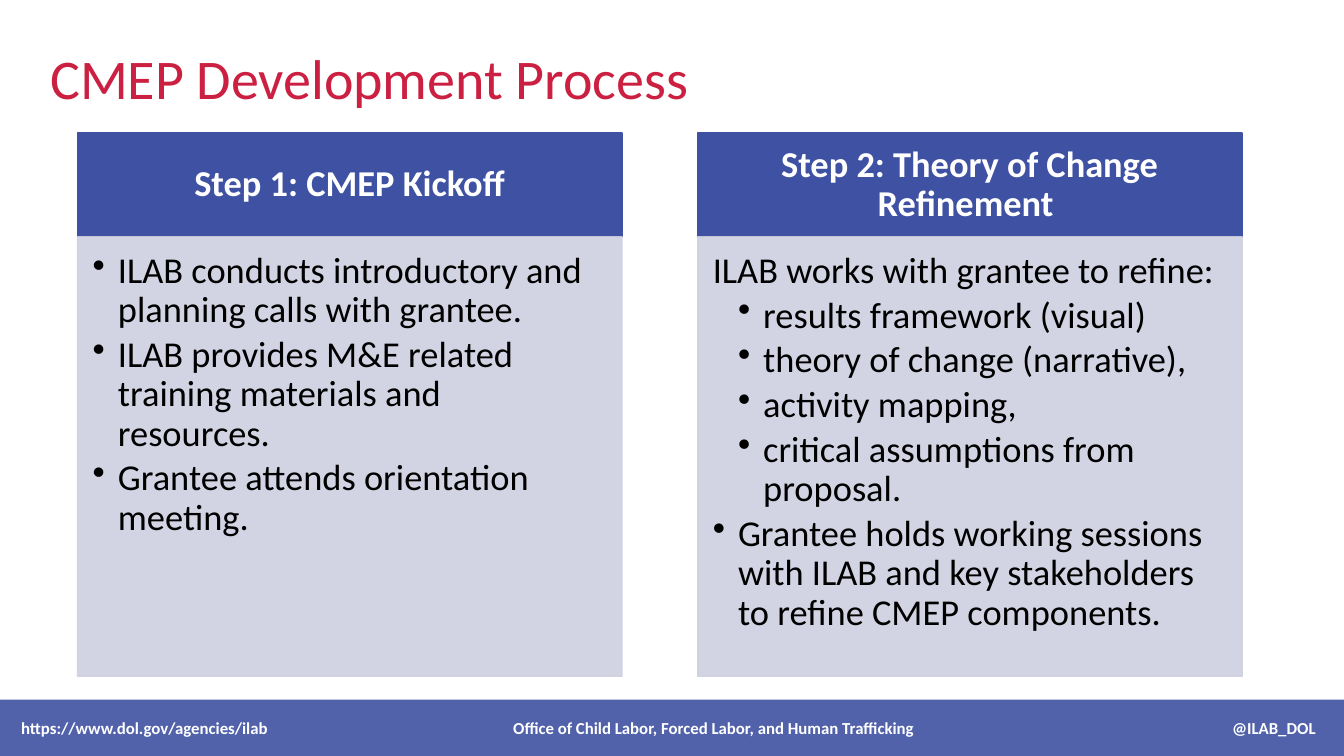
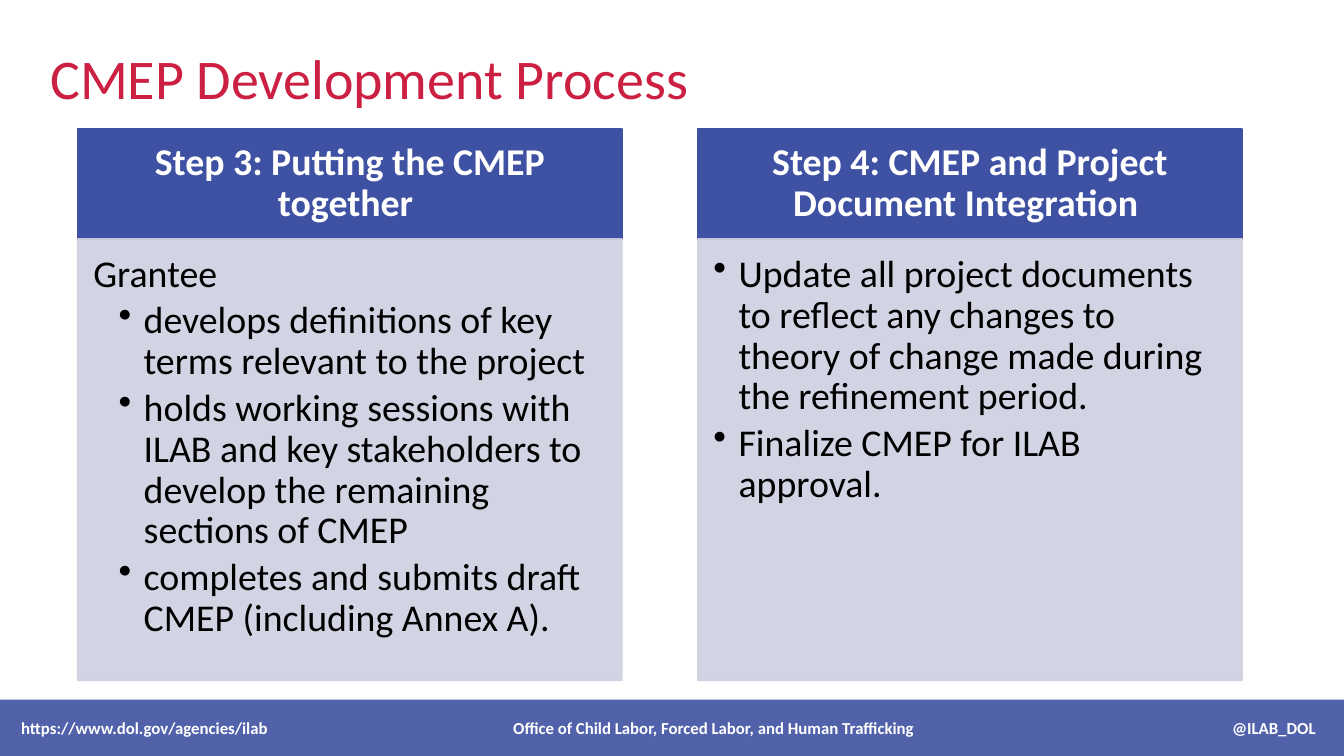
"""Build the two CMEP development process slides."""

from dataclasses import dataclass, field
from typing import Any, NamedTuple

from lxml.etree import SubElement
from pptx import Presentation
from pptx.dml.color import RGBColor as Rgb
from pptx.enum.shapes import MSO_AUTO_SHAPE_TYPE as ShapeKind
from pptx.enum.text import MSO_VERTICAL_ANCHOR as Anchor
from pptx.enum.text import PP_PARAGRAPH_ALIGNMENT as Align
from pptx.oxml.ns import qn
from pptx.util import Inches, Pt


@dataclass(frozen=True)
class Theme:
    font: str = "Calibri"
    title: Rgb = field(default_factory=lambda: Rgb.from_string("CB2042"))
    band: Rgb = field(default_factory=lambda: Rgb.from_string("3F51A2"))
    panel: Rgb = field(default_factory=lambda: Rgb.from_string("CFD0E0"))
    light: Rgb = field(default_factory=lambda: Rgb.from_string("FFFFFF"))
    dark: Rgb = field(default_factory=lambda: Rgb.from_string("000000"))
    title_size: int = 40
    footer_size: int = 12
    line_spacing: float = 0.9
    opacity: int = 90


class Area(NamedTuple):
    left: float
    top: float
    width: float
    height: float


class Insets(NamedTuple):
    left: float = 0.1
    top: float = 0.05
    right: float = 0.1
    bottom: float = 0.05

    def scaled(self, factor: float) -> "Insets":
        return Insets(*(value * factor for value in self))


class Item(NamedTuple):
    text: str
    level: int = 1
    bullet: bool = True


class Step(NamedTuple):
    heading: str
    items: list[Item]


class StepPage(NamedTuple):
    size: int
    top: float
    split: float
    bottom: float
    steps: list[Step]


THEME = Theme()
TITLE = "CMEP Development Process"
TITLE_AREA = Area(0.4, 0.46, 12.16, 1.05)
FOOTER = [
    "https://www.dol.gov/agencies/ilab",
    "Office of Child Labor, Forced Labor, and Human Trafficking",
    "@ILAB_DOL",
]
FOOTER_AREA = Area(0, 6.94, 13.37, 0.56)
FOOTER_TABS = {"ctr": 6.87, "r": 12.84}
COLUMN_LEFT, COLUMN_WIDTH, COLUMN_PITCH = 0.77, 5.4, 6.15
BASE_SIZE = 26
HEADING_INSETS = Insets(0.2, 0.12, 0.2, 0.12)
BODY_INSETS = Insets(0.15, 0.15, 0.2, 0.23)
INDENT = 0.25

PAGES = [
    StepPage(26, 1.32, 2.35, 6.71, [
        Step("Step 1: CMEP Kickoff", [
            Item("ILAB conducts introductory and planning calls with grantee."),
            Item("ILAB provides M&E related training materials and resources."),
            Item("Grantee attends orientation meeting."),
        ]),
        Step("Step 2: Theory of Change Refinement ", [
            Item("ILAB works with grantee to refine:", bullet=False),
            Item("results framework (visual)", 2),
            Item("theory of change (narrative),", 2),
            Item("activity mapping,", 2),
            Item("critical assumptions from proposal.", 2),
            Item("Grantee holds working sessions with ILAB and key stakeholders "
                 "to refine CMEP components."),
        ]),
    ]),
    StepPage(27, 1.28, 2.37, 6.75, [
        Step("Step 3: Putting the CMEP together ", [
            Item("Grantee", bullet=False),
            Item("develops definitions of key terms relevant to the project", 2),
            Item("holds working sessions with ILAB and key stakeholders to "
                 "develop the remaining sections of CMEP", 2),
            Item("completes and submits draft CMEP (including Annex A).", 2),
        ]),
        Step("Step 4: CMEP and Project Document Integration ", [
            Item("Update all project documents to reflect any changes to theory "
                 "of change made during the refinement period."),
            Item("Finalize CMEP for ILAB approval."),
        ]),
    ]),
]


def apply(target: Any, formats: dict[str, Any]) -> None:
    """Set every named attribute on the target."""
    for name, value in formats.items():
        setattr(target, name, value)


def set_frame(frame: Any, anchor: Anchor, insets: Insets = Insets()) -> None:
    """Set wrapping, anchor and margins of a text frame."""
    margins = {f"margin_{side}": Inches(value) for side, value in insets._asdict().items()}
    apply(frame, {"word_wrap": True, "vertical_anchor": anchor, **margins})


def write(para: Any, text: str, size: int, color: Rgb, bold: bool = False,
          **formats: Any) -> None:
    """Write one formatted span into a paragraph."""
    apply(para, {"alignment": Align.LEFT, "line_spacing": THEME.line_spacing, **formats})
    span = para.add_run()
    span.text = text
    apply(span.font, {"name": THEME.font, "size": Pt(size), "bold": bold})
    span.font.color.rgb = color


def add_panel(page: Any, area: Area, color: Rgb, opacity: int = 100,
              outlined: bool = True) -> Any:
    """Add a filled rectangle and return it."""
    panel = page.shapes.add_shape(ShapeKind.RECTANGLE, *map(Inches, area))
    panel.shadow.inherit = False
    panel.fill.solid()
    panel.fill.fore_color.rgb = color
    if outlined:
        panel.line.color.rgb = color
        panel.line.width = Pt(1)
    else:
        panel.line.fill.background()
    if opacity < 100:
        for paint in panel._element.spPr.iter(qn("a:srgbClr")):
            SubElement(paint, qn("a:alpha"), val=str(opacity * 1000))
    return panel


def add_footer(page: Any) -> None:
    """Add the footer band with left, centred and right texts."""
    band = add_panel(page, FOOTER_AREA, THEME.band, THEME.opacity, outlined=False)
    set_frame(band.text_frame, Anchor.MIDDLE, Insets(left=0.21))
    para = band.text_frame.paragraphs[0]
    write(para, "\t".join(FOOTER), THEME.footer_size, THEME.light, bold=True, line_spacing=1.0)
    tabs = SubElement(para._p.get_or_add_pPr(), qn("a:tabLst"))
    for alignment, position in FOOTER_TABS.items():
        SubElement(tabs, qn("a:tab"), pos=str(Inches(position)), algn=alignment)


def add_title(page: Any) -> None:
    """Add the slide title."""
    box = page.shapes.add_textbox(*map(Inches, TITLE_AREA))
    set_frame(box.text_frame, Anchor.TOP)
    write(box.text_frame.paragraphs[0], TITLE, THEME.title_size, THEME.title)


def add_item(para: Any, item: Item, size: int) -> None:
    """Write one list item with its hanging indent."""
    write(para, item.text, size, THEME.dark, level=item.level, space_after=Pt(size * 0.15))
    properties = para._p.get_or_add_pPr()
    properties.set("marL", str(Inches(INDENT * item.level)))
    properties.set("indent", str(-Inches(INDENT)))
    if item.bullet:
        SubElement(properties, qn("a:buChar"), char="•")


def add_step(page: Any, step: Step, layout: StepPage, left: float) -> None:
    """Add one step column: a heading panel above a body panel."""
    scale = layout.size / BASE_SIZE
    heading = add_panel(
        page, Area(left, layout.top, COLUMN_WIDTH, layout.split - layout.top), THEME.band)
    set_frame(heading.text_frame, Anchor.MIDDLE, HEADING_INSETS.scaled(scale))
    write(heading.text_frame.paragraphs[0], step.heading, layout.size, THEME.light,
          bold=True, alignment=Align.CENTER)

    body = add_panel(
        page, Area(left, layout.split, COLUMN_WIDTH, layout.bottom - layout.split),
        THEME.panel, THEME.opacity)
    frame = body.text_frame
    set_frame(frame, Anchor.TOP, BODY_INSETS.scaled(scale))
    for index, item in enumerate(step.items):
        add_item(frame.add_paragraph() if index else frame.paragraphs[0], item, layout.size)


def main() -> None:
    """Build and save the deck."""
    deck = Presentation()
    apply(deck, {"slide_width": Inches(13.33), "slide_height": Inches(7.5)})
    for layout in PAGES:
        page = deck.slides.add_slide(deck.slide_layouts[6])
        add_footer(page)
        add_title(page)
        for index, step in enumerate(layout.steps):
            add_step(page, step, layout, COLUMN_LEFT + index * COLUMN_PITCH)
    deck.save("out.pptx")


if __name__ == "__main__":
    main()
